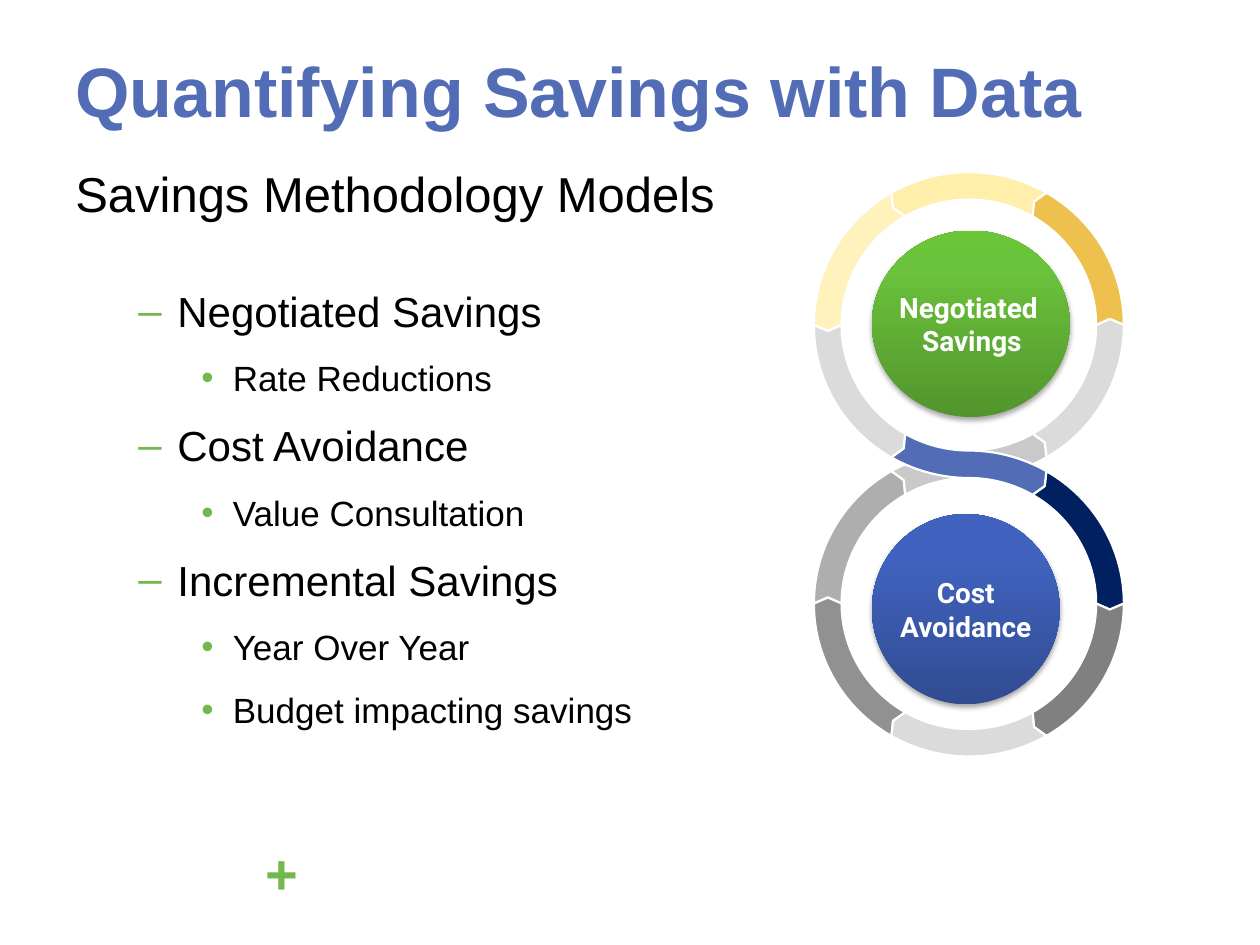
from copy import deepcopy
from math import cos, radians, sin, tan

from lxml import etree
from pptx import Presentation
from pptx.dml.color import RGBColor
from pptx.enum.shapes import MSO_SHAPE
from pptx.enum.text import MSO_ANCHOR, PP_ALIGN
from pptx.oxml import parse_xml
from pptx.oxml.ns import nsdecls, qn
from pptx.util import Inches, Pt

CENTER, MIDDLE, OVAL = PP_ALIGN.CENTER, MSO_ANCHOR.MIDDLE, MSO_SHAPE.OVAL
rgb = RGBColor.from_string
GREEN, BLUE, WHITE = "73B84D", "526DB6", "FFFFFF"

# Two rings, flattened so that the outer edge of each touches the inner edge of the other
CX, TOP_CY, BOTTOM_CY = 7.69, 2.58, 4.79
OUTER, INNER = 1.23, 1.01
MID = (OUTER + INNER) / 2
SQUASH = (BOTTOM_CY - TOP_CY) / (OUTER + INNER)
TIP = 2.5  # degrees by which a chevron tip leads its joint


def add_run(p, text, size, color, bold=False, font="Arial"):
    r = p.add_run()
    r.text = text
    r.font.size, r.font.bold, r.font.name = Pt(size), bold, font
    r.font.color.rgb = rgb(color)


def add_band(arcs, color):
    """Draw a closed band; each arc is (centre y, radius, start, end), degrees clockwise."""
    points = []
    for cy, radius, start, end in arcs:
        middle = (start + end) / 2
        stops = [start, middle, end] if middle % 90 == 0 else [start, end]
        for a, b in zip(stops, stops[1:]):
            a, b = radians(a), radians(b)
            k = 4 / 3 * tan((b - a) / 4)
            units = [(cos(a), sin(a)), (cos(a) - k * sin(a), sin(a) + k * cos(a)),
                     (cos(b) + k * sin(b), sin(b) - k * cos(b)), (cos(b), sin(b))]
            curve = [(Inches(round(CX + radius * x, 3)),
                      Inches(round(cy + radius * SQUASH * y, 3))) for x, y in units]
            if not points:
                points.append(curve[0])
            elif points[-1] != curve[0]:
                points += [points[-1], curve[0], curve[0]]
            if a != b:
                points += curve[1:]
    builder = s.shapes.build_freeform(*points[0])
    builder.add_line_segments(points[1:], close=True)
    sp = builder.convert_to_shape()
    # Every three line points become one cubic curve
    lines = list(sp._element.iter(qn("a:lnTo")))
    for i in range(0, len(lines), 3):
        curve = etree.Element(qn("a:cubicBezTo"))
        lines[i].addprevious(curve)
        for line in lines[i:i + 3]:
            curve.append(line[0])
            line.getparent().remove(line)
    sp.shadow.inherit = False
    sp.fill.solid()
    sp.fill.fore_color.rgb = rgb(color)
    sp.line.color.rgb = rgb(WHITE)
    sp.line.width = Pt(1.25)


prs = Presentation()
prs.slide_width, prs.slide_height = Inches(10), Inches(7.5)
s = prs.slides.add_slide(prs.slide_layouts[6])

# Plus sign and title
plus = s.shapes.add_textbox(Inches(2.01), Inches(6.61), Inches(0.46), Inches(0.64))
add_run(plus.text_frame.paragraphs[0], "+", 32, GREEN, True)

title = s.shapes.add_textbox(Inches(0.5), Inches(0.33), Inches(9), Inches(0.75))
title.text_frame.word_wrap = True
add_run(title.text_frame.paragraphs[0], "Quantifying Savings with Data", 40, BLUE, True)

# Outline of savings models
body = s.shapes.add_textbox(Inches(0.5), Inches(1.25), Inches(9), Inches(4.92))
tf = body.text_frame
tf.word_wrap = True
add_run(tf.paragraphs[0], "Savings Methodology Models", 28, "000000")

# level: left margin, hanging indent, bullet, size
LEVELS = {1: (0.81, 0.31, "–", 24), 2: (1.25, 0.25, "•", 20)}
outline = [
    (1, "Negotiated Savings"),
    (2, "Rate Reductions"),
    (1, "Cost Avoidance"),
    (2, "Value Consultation"),
    (1, "Incremental Savings"),
    (2, "Year Over Year"),
    (2, "Budget impacting savings"),
]
for i, (level, text) in enumerate(outline):
    margin, hang, bullet, size = LEVELS[level]
    p = tf.add_paragraph()
    p.level = level
    pPr = p._p.get_or_add_pPr()
    pPr.set("marL", str(Inches(margin)))
    pPr.set("indent", str(-Inches(hang)))
    for xml in (
        f'<a:buClr {nsdecls("a")}><a:srgbClr val="{GREEN}"/></a:buClr>',
        f'<a:buFont {nsdecls("a")} typeface="Arial"/>',
        f'<a:buChar {nsdecls("a")} char="{bullet}"/>',
    ):
        pPr.append(parse_xml(xml))
    p.space_before = Pt(12 if i else 36)
    add_run(p, text, size, "000000")

# Ring segments of 60 degrees, then the two bands that cross between the rings
rings = [
    (TOP_CY, -TIP, {180: "FFF2BD", 300: "EEC04E", 0: "DBDBDB", 240: "FFEFAB", 120: "DBDBDB"}),
    (BOTTOM_CY, TIP, {300: "002060", 0: "808080", 180: "AEAEAE", 120: "919191", 60: "DBDBDB"}),
]
for cy, tip, colors in rings:
    for start, color in colors.items():
        end = start + 60
        add_band([(cy, INNER, start, end), (cy, MID, end + tip, end + tip),
                  (cy, OUTER, end, start), (cy, MID, start + tip, start + tip)], color)
for top, bottom, color in ((60, 240, "C9C9C9"), (120, 300, BLUE)):
    add_band([(TOP_CY, INNER, top, 90), (BOTTOM_CY, OUTER, 270, bottom),
              (BOTTOM_CY, MID, bottom + TIP, bottom + TIP),
              (BOTTOM_CY, INNER, bottom, 270), (TOP_CY, OUTER, 90, top),
              (TOP_CY, MID, top - TIP, top - TIP)], color)

# Gradient discs inside the rings
discs = [
    (1.83, 1.57, 1.48, ("52952D", "6BC23B", "6BC539")),
    (4.08, 1.49, 1.51, ("324C93", "4163BF", "3F62C2")),
]
ovals = []
for top, width, height, colors in discs:
    sp = s.shapes.add_shape(OVAL, Inches(6.92), Inches(top), Inches(width), Inches(height))
    sp.fill.gradient()
    sp.fill.gradient_angle = 90
    stops = sp._element.spPr.find(".//" + qn("a:gsLst"))
    stops.append(deepcopy(stops[-1]))
    for stop, position, color in zip(sp.fill.gradient_stops, (0, 0.8, 1), colors):
        stop.position = position
        stop.color.rgb = rgb(color)
    sp.line.fill.background()
    sp.shadow.inherit = False
    sp._element.spPr.find(qn("a:effectLst")).append(parse_xml(
        f'<a:outerShdw {nsdecls("a")} blurRad="{Pt(3.1)}" dist="{Pt(1.8)}" dir="5400000"'
        ' rotWithShape="0"><a:srgbClr val="000000"><a:alpha val="35000"/></a:srgbClr>'
        '</a:outerShdw>'))
    ovals.append(sp)

tf = ovals[0].text_frame
tf.word_wrap = False
tf.vertical_anchor = MIDDLE
tf.margin_left = tf.margin_top = tf.margin_bottom = Inches(0.1)
tf.margin_right = Inches(0.08)
for p, text in ((tf.paragraphs[0], "Negotiated "), (tf.add_paragraph(), "Savings")):
    p.alignment = CENTER
    add_run(p, text, 16, WHITE, True, "Roboto")

label = s.shapes.add_textbox(Inches(6.92), Inches(4.52), Inches(1.49), Inches(0.64))
label.text_frame.word_wrap = True
p = label.text_frame.paragraphs[0]
p.alignment = CENTER
add_run(p, "Cost Avoidance", 16, WHITE, True, "Roboto")

prs.save("out.pptx")
